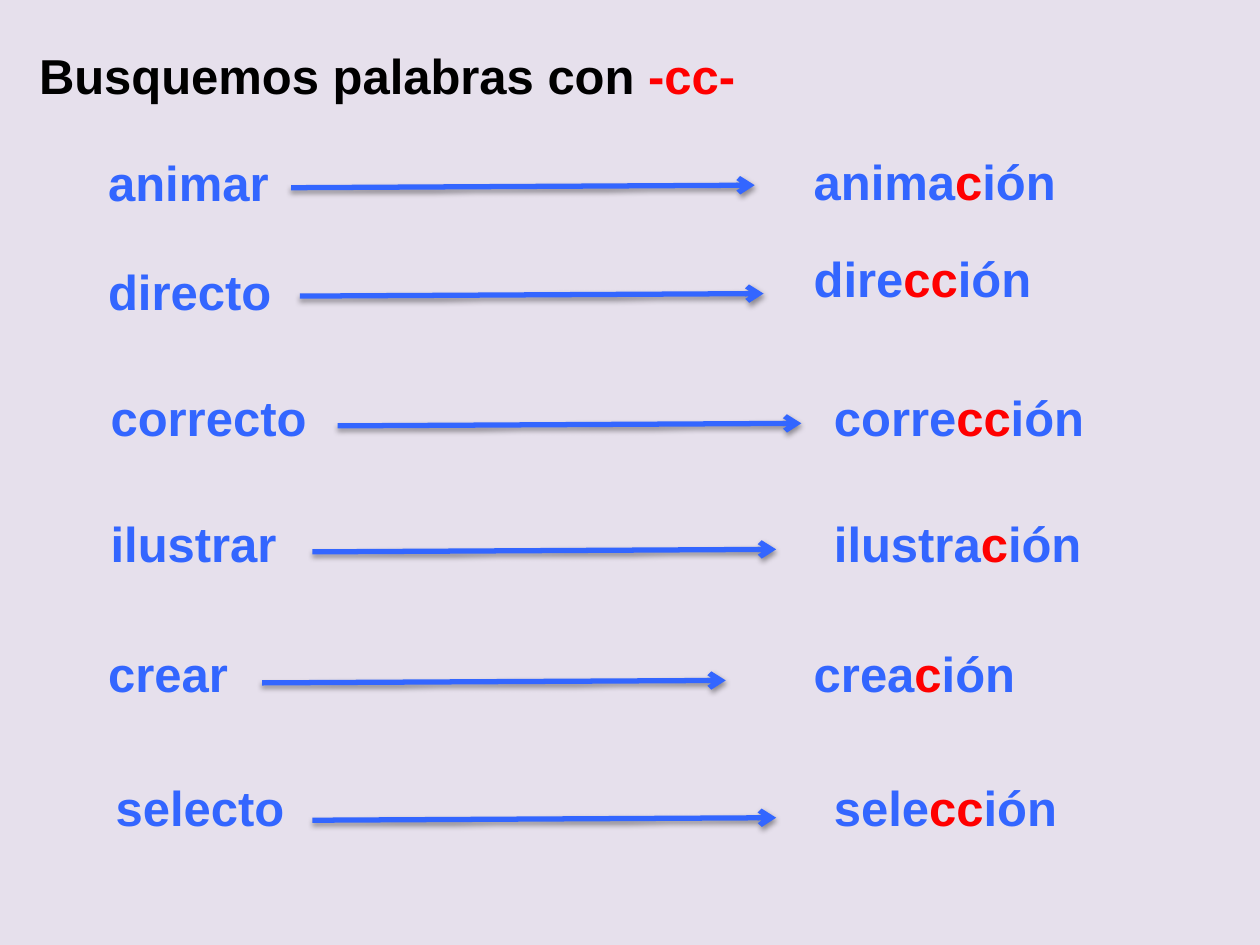
from lxml.etree import fromstring
from pptx import Presentation
from pptx.dml.color import RGBColor
from pptx.enum.shapes import MSO_CONNECTOR
from pptx.enum.text import MSO_ANCHOR, MSO_AUTO_SIZE, PP_ALIGN
from pptx.oxml.ns import nsdecls
from pptx.util import Pt

PX = 9144
BLACK = RGBColor(0x00, 0x00, 0x00)
RED = RGBColor(0xFF, 0x00, 0x00)
BLUE = RGBColor(0x33, 0x66, 0xFF)
LILAC = RGBColor(0xE6, 0xE0, 0xEC)
FONT = {"name": "Arial", "size": Pt(28), "bold": True}
FRAME = {"word_wrap": False, "auto_size": MSO_AUTO_SIZE.SHAPE_TO_FIT_TEXT,
         "vertical_anchor": MSO_ANCHOR.TOP}
HIGH, REACH, RISE = 57, 368, 2
SHADE = (f'<a:effectLst {nsdecls("a")}><a:outerShdw blurRad="40000" dist="20000" '
         'dir="5400000" rotWithShape="0"><a:srgbClr val="000000">'
         '<a:alpha val="38000"/></a:srgbClr></a:outerShdw></a:effectLst>')
HEAD = f'<a:tailEnd {nsdecls("a")} type="arrow"/>'

ROWS = [
    (("animar", 76, 116, 149), (231, 149), ("anima", "c", 636, 115, 214)),
    (("directo", 76, 203, 151), (238, 235), ("dire", "cc", 636, 192, 195)),
    (("correcto", 78, 303, 177), (268, 338), ("corre", "cc", 652, 303, 221)),
    (("ilustrar", 78, 403, 153), (248, 438), ("ilustra", "c", 652, 403, 219)),
    (("crear", 76, 506, 117), (208, 542), ("crea", "c", 636, 506, 182)),
    (("selecto", 82, 612, 156), (248, 651), ("sele", "cc", 652, 612, 199)),
]


def style(item, values):
    """Set each attribute of the item from a dict."""
    for key, value in values.items():
        setattr(item, key, value)


def write(shape, box, runs):
    """Place a text shape in its box and fill it with coloured runs."""
    style(shape, dict(zip(("left", "top", "width", "height"),
                          (n * PX for n in box))))
    frame = shape.text_frame
    style(frame, FRAME)
    para = frame.paragraphs[0]
    para.alignment = PP_ALIGN.LEFT
    for text, color in runs:
        run = para.add_run()
        run.text = text
        style(run.font, FONT)
        run.font.color.rgb = color


def label(slide, box, runs):
    """Add a text box with coloured runs."""
    write(slide.shapes.add_textbox(0, 0, 0, 0), box, runs)


def arrow(slide, x, y):
    """Draw a shaded arrow from a start point to the right."""
    ends = (n * PX for n in (x, y, x + REACH, y - RISE))
    link = slide.shapes.add_connector(MSO_CONNECTOR.STRAIGHT, *ends)
    link.line.color.rgb = BLUE
    link.line.width = Pt(3)
    link.line._get_or_add_ln().append(fromstring(HEAD))
    link._element.spPr.append(fromstring(SHADE))


def pair(slide, base, start, noun):
    """Build one row: base word, arrow and derived noun."""
    word, left, top, width = base
    label(slide, (left, top, width, HIGH), [(word, BLUE)])
    arrow(slide, *start)
    stem, mark, left, top, width = noun
    label(slide, (left, top, width, HIGH),
          [(stem, BLUE), (mark, RED), ("ión", BLUE)])


def main():
    """Build and save the slide."""
    deck = Presentation()
    style(deck, {"slide_width": 1000 * PX, "slide_height": 750 * PX})
    slide = deck.slides.add_slide(deck.slide_layouts[5])
    fill = slide.background.fill
    fill.solid()
    fill.fore_color.rgb = LILAC
    write(slide.shapes.title, (21, 31, 579, HIGH),
          [("Busquemos palabras con ", BLACK), ("-cc-", RED)])
    for row in ROWS:
        pair(slide, *row)
    deck.save("out.pptx")


if __name__ == "__main__":
    main()
